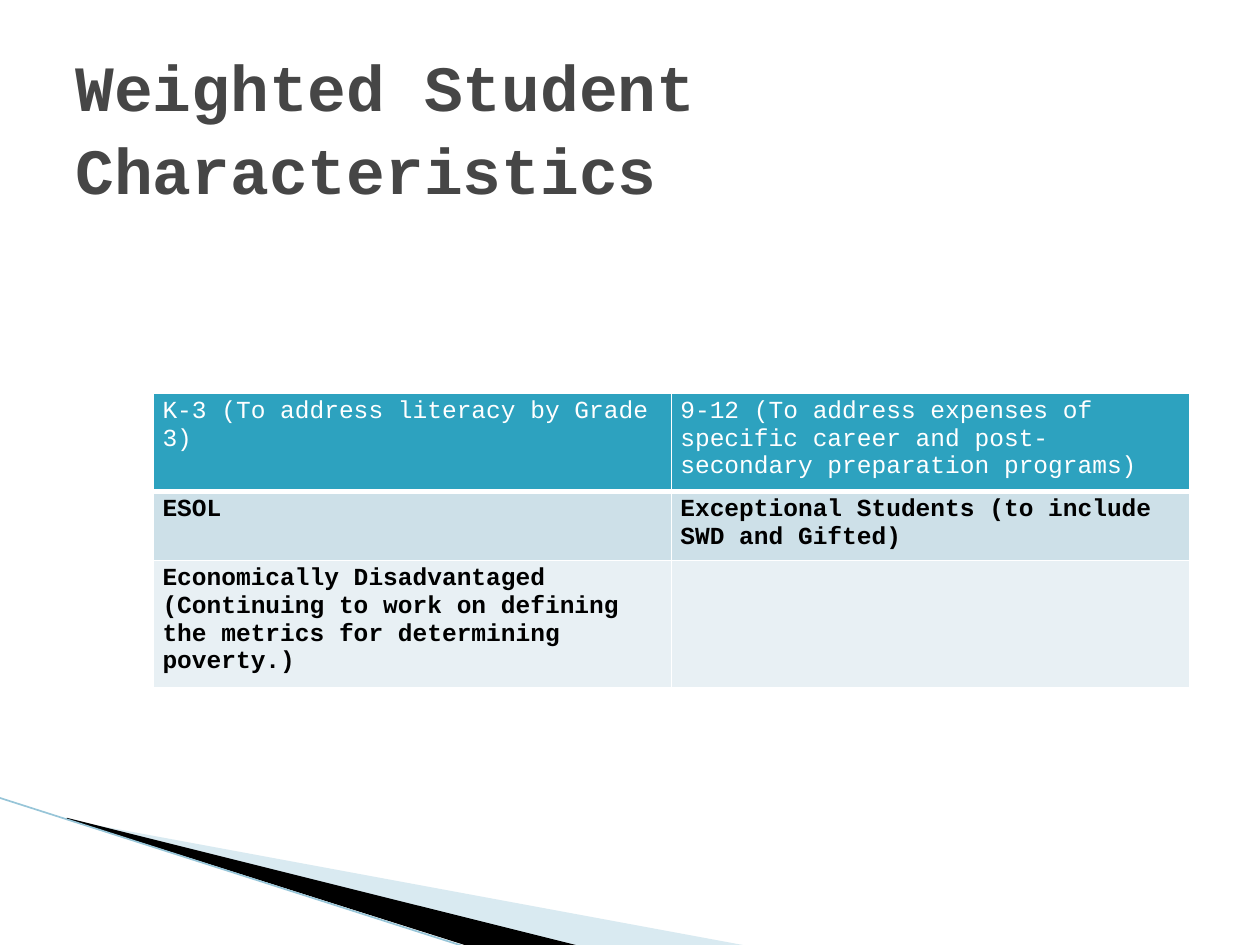
from lxml import etree
from pptx import Presentation
from pptx.dml.color import RGBColor
from pptx.enum.shapes import MSO_CONNECTOR
from pptx.enum.text import MSO_ANCHOR
from pptx.oxml.ns import qn
from pptx.util import Inches, Pt

LINE = MSO_CONNECTOR.STRAIGHT
MID = MSO_ANCHOR.MIDDLE
FONT = "Courier New"
WIDE, HIGH = 10, 7.5
HUES = {
    "title": "464646", "head": "2DA2BF", "odd": "CDE0E8", "even": "E8F0F4",
    "white": "FFFFFF", "black": "000000", "pale": "A0CBDC", "edge": "97C5D8",
}
ROWS = [
    ("K-3 (To address literacy by Grade 3)",
     "9-12 (To address expenses of specific career and post-secondary preparation programs)"),
    ("ESOL", "Exceptional Students (to include SWD and Gifted)"),
    ("Economically Disadvantaged (Continuing to work on defining the metrics "
     "for determining poverty.)", ""),
]
TALL = [0.75, 0.53, 0.75]


def hue(name):
    return RGBColor.from_string(HUES[name])


def style(para, size, color, bold):
    for run in para.runs:
        font = run.font
        font.name, font.size, font.bold = FONT, Pt(size), bold
        font.color.rgb = hue(color)


def wedge(slide, box, points, color, alpha=100):
    """Draw a flat outline whose points are shares of the box."""
    left, top, width, height = box
    spots = [(Inches(left + x * width), Inches(top + y * height)) for x, y in points]
    build = slide.shapes.build_freeform(*spots[0])
    build.add_line_segments(spots[1:])
    shape = build.convert_to_shape()
    shape.shadow.inherit = False
    shape.line.fill.background()
    shape.fill.solid()
    shape.fill.fore_color.rgb = hue(color)
    if alpha < 100:
        tone = shape.fill._xPr.find(".//" + qn("a:srgbClr"))
        etree.SubElement(tone, qn("a:alpha"), val=str(alpha * 1000))


def corner(slide, box):
    """Place the two wedges and the edge line in the lower left corner."""
    left, top, width, height = box
    wedge(slide, (left + 0.56, top + 0.17, 5.4, 1.01),
          [(0, 0.01), (1, 1), (0.74, 1), (0, 0)], "pale", 40)
    wedge(slide, (left + 0.54, top + 0.16, 4.04, 1.02),
          [(0, 0), (1, 0.99), (0.79, 1), (0, 0.01)], "black")
    edge = slide.shapes.add_connector(
        LINE, Inches(left), Inches(top),
        Inches(left + width), Inches(top + height))
    edge.line.color.rgb = hue("edge")
    edge.line.width = Pt(0.95)
    etree.SubElement(edge._element.spPr, qn("a:effectLst"))


def title(slide, box, text):
    frame = slide.shapes.add_textbox(*map(Inches, box)).text_frame
    frame.word_wrap = True
    frame.vertical_anchor = MID
    frame.margin_top, frame.margin_bottom = Inches(0.12), 0
    frame.text = text
    para = frame.paragraphs[0]
    para.line_spacing = 1.07
    style(para, 36.9, "title", True)


def border(cell, head):
    props = cell._tc.get_or_add_tcPr()
    for i, side in enumerate("LRTB"):
        width = 3 if head and side == "B" else 1
        line = etree.Element(qn("a:ln" + side), w=str(Pt(width)))
        fill = etree.SubElement(line, qn("a:solidFill"))
        etree.SubElement(fill, qn("a:srgbClr"), val=HUES["white"])
        props.insert(i, line)


def grid(slide, box, rows):
    count = len(rows[0])
    table = slide.shapes.add_table(len(rows), count, *map(Inches, box)).table
    for col in table.columns:
        col.width = Inches(box[2] / count)
    for r, texts in enumerate(rows):
        table.rows[r].height = Inches(TALL[r])
        head = r == 0
        for c, text in enumerate(texts):
            cell = table.cell(r, c)
            cell.margin_left = cell.margin_right = Inches(0.07)
            cell.margin_top = cell.margin_bottom = Inches(0.04)
            cell.fill.solid()
            cell.fill.fore_color.rgb = hue(("head", "odd", "even")[r])
            border(cell, head)
            cell.text_frame.text = text
            style(cell.text_frame.paragraphs[0], 14,
                  "white" if head else "black", not head)


def main():
    deck = Presentation()
    deck.slide_width, deck.slide_height = Inches(WIDE), Inches(HIGH)
    slide = deck.slides.add_slide(deck.slide_layouts[6])
    corner(slide, (-0.01, 6.33, 3.72, 1.19))
    title(slide, (0.05 * WIDE, 0.04 * HIGH, 0.9 * WIDE, 1.25),
          "Weighted Student Characteristics")
    grid(slide, (1.22, 3.12, 8.22, sum(TALL)), ROWS)
    deck.save("out.pptx")


if __name__ == "__main__":
    main()
